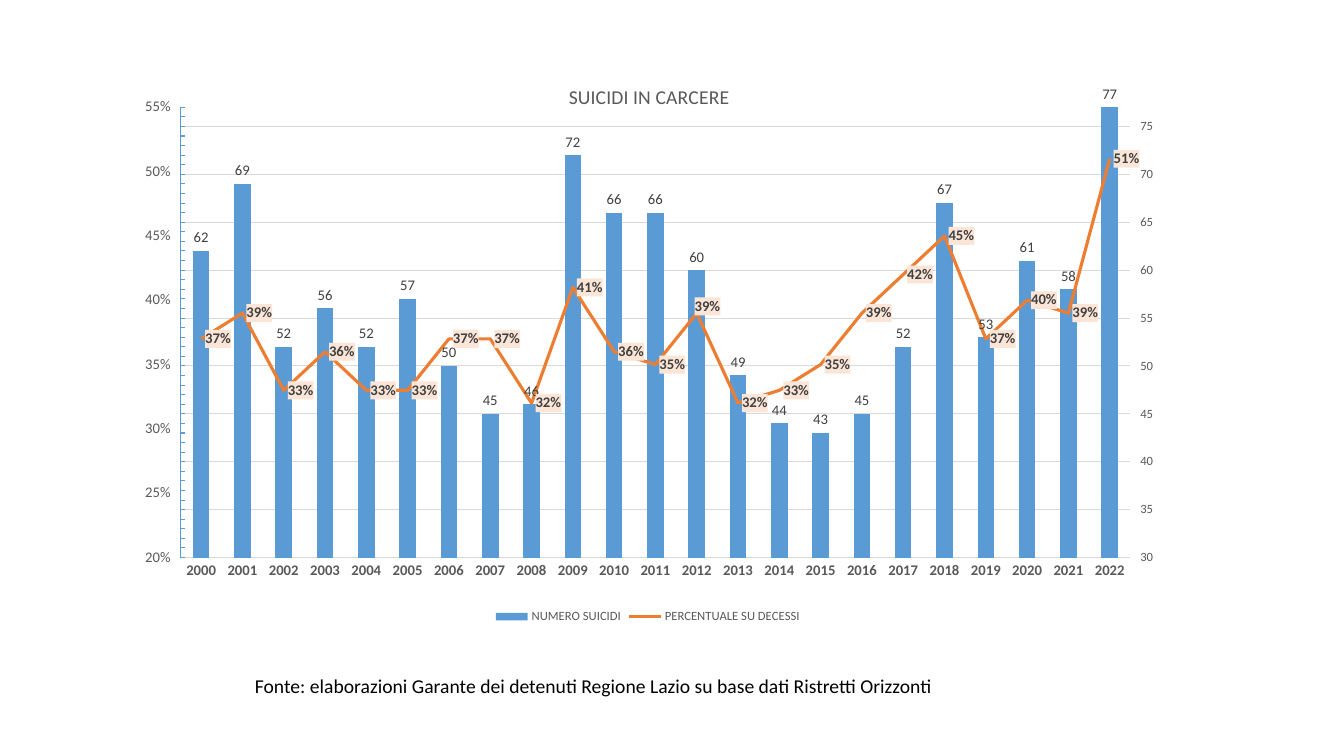
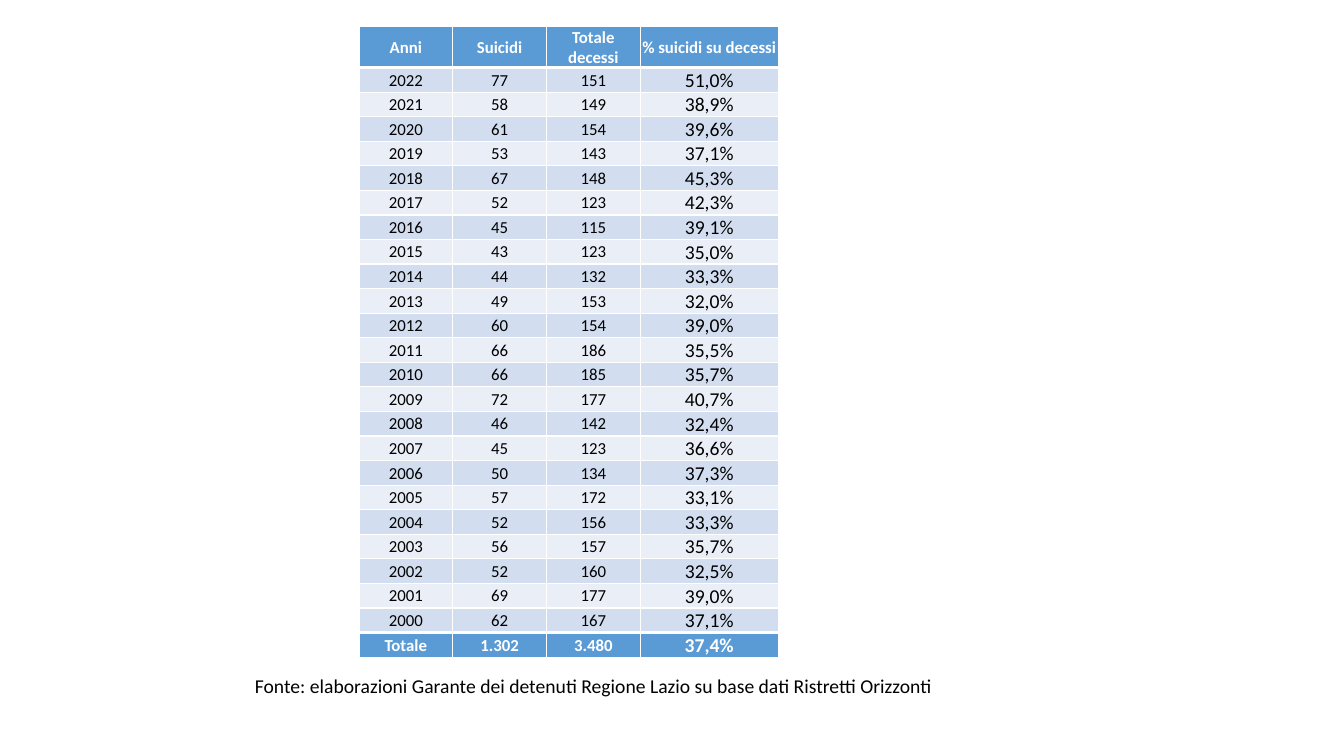
from copy import deepcopy

from lxml import etree
from pptx import Presentation
from pptx.chart.data import CategoryChartData
from pptx.dml.color import RGBColor
from pptx.enum import chart as ch, text as tx
from pptx.oxml import parse_xml
from pptx.oxml.ns import nsdecls, qn
from pptx.util import Inches, Pt

FONT = "Calibri"
BLUE = RGBColor(0x5B, 0x9B, 0xD5)
ORANGE = RGBColor(0xED, 0x7D, 0x31)
PEACH = RGBColor(0xFB, 0xE5, 0xD6)
BAND_DARK = RGBColor(0xD2, 0xDE, 0xEF)
BAND_LIGHT = RGBColor(0xEA, 0xEF, 0xF7)
GRID = RGBColor(0xD9, 0xD9, 0xD9)
GREY = RGBColor(0x59, 0x59, 0x59)
DARK = RGBColor(0x40, 0x40, 0x40)
BLACK = RGBColor(0, 0, 0)
WHITE = RGBColor(0xFF, 0xFF, 0xFF)

SOURCE = ("Fonte: elaborazioni Garante dei detenuti Regione Lazio "
          "su base dati Ristretti Orizzonti")
FIRST_YEAR = 2000
SUICIDES = [62, 69, 52, 56, 52, 57, 50, 45, 46, 72, 66, 66,
            60, 49, 44, 43, 45, 52, 67, 53, 61, 58, 77]
DEATHS = [167, 177, 160, 157, 156, 172, 134, 123, 142, 177, 185, 186,
          154, 153, 132, 123, 115, 123, 148, 143, 154, 149, 151]
SHARES = [s / d for s, d in zip(SUICIDES, DEATHS)]
YEARS = [str(FIRST_YEAR + i) for i in range(len(SUICIDES))]
HEADER = ["Anni", "Suicidi", "Totale decessi", "% suicidi su decessi"]
TOTALS = ["Totale", "1.302", "3.480", "37,4%"]
COL_WIDTHS = [0.93, 0.93, 0.93, 1.37]

SECONDARY_CAT, SECONDARY_VAL = "50010", "50020"


def set_font(font, size, color, bold=False):
    font.name, font.size, font.bold = FONT, Pt(size), bold
    font.color.rgb = color


def add_source(s):
    tf = s.shapes.add_textbox(Inches(2.43), Inches(6.64), Inches(7), Inches(0.34)).text_frame
    tf.word_wrap = False
    tf.auto_size = tx.MSO_AUTO_SIZE.SHAPE_TO_FIT_TEXT
    tf.text = SOURCE
    set_font(tf.paragraphs[0].runs[0].font, 14, BLACK)


def manual_layout(x, y, w=None, h=None):
    """Chart layout in fractions; with a size it places the inner plot area."""
    sized = w is not None
    items = [("layoutTarget", "inner")] if sized else []
    items += [("xMode", "edge"), ("yMode", "edge")] if sized else []
    items += [("x", x), ("y", y)] + ([("w", w), ("h", h)] if sized else [])
    body = "".join(f'<c:{tag} val="{val}"/>' for tag, val in items)
    return parse_xml(f'<c:layout {nsdecls("c")}><c:manualLayout>{body}'
                     '</c:manualLayout></c:layout>')


def replace_layout(parent, layout, after=None):
    for old in parent.findall(qn("c:layout")):
        parent.remove(old)
    if after is None:
        parent.insert(0, layout)
    else:
        after.addnext(layout)


def move_to_secondary_line(chart):
    """Turn the second column series into a line with axes of its own."""
    plot_area = chart._chartSpace.chart.plotArea
    bar = plot_area.find(qn("c:barChart"))
    ser = bar.findall(qn("c:ser"))[1]
    for invert in ser.findall(qn("c:invertIfNegative")):
        ser.remove(invert)
    line = parse_xml(
        f'<c:lineChart {nsdecls("c")}><c:grouping val="standard"/><c:varyColors val="0"/>'
        f'<c:marker val="1"/><c:axId val="{SECONDARY_CAT}"/><c:axId val="{SECONDARY_VAL}"/>'
        '</c:lineChart>')
    line.insert(2, ser)
    bar.addnext(line)
    cat_axis = parse_xml(
        f'<c:catAx {nsdecls("c")}><c:axId val="{SECONDARY_CAT}"/>'
        '<c:scaling><c:orientation val="minMax"/></c:scaling><c:delete val="1"/>'
        f'<c:axPos val="b"/><c:crossAx val="{SECONDARY_VAL}"/></c:catAx>')
    val_axis = parse_xml(
        f'<c:valAx {nsdecls("c", "a")}><c:axId val="{SECONDARY_VAL}"/>'
        '<c:scaling><c:orientation val="minMax"/><c:max val="0.55"/><c:min val="0.2"/></c:scaling>'
        '<c:delete val="0"/><c:axPos val="r"/><c:numFmt formatCode="0%" sourceLinked="0"/>'
        '<c:majorTickMark val="out"/><c:minorTickMark val="none"/><c:tickLblPos val="low"/>'
        '<c:spPr><a:ln><a:noFill/></a:ln></c:spPr>'
        f'<c:txPr><a:bodyPr/><a:p><a:pPr><a:defRPr sz="1050"><a:solidFill><a:srgbClr val="{GREY}"/>'
        f'</a:solidFill><a:latin typeface="{FONT}"/></a:defRPr></a:pPr><a:endParaRPr lang="it-IT"/>'
        f'</a:p></c:txPr><c:crossAx val="{SECONDARY_CAT}"/><c:crosses val="max"/>'
        '<c:crossBetween val="between"/><c:majorUnit val="0.05"/></c:valAx>')
    plot_area.find(qn("c:valAx")).addnext(val_axis)
    val_axis.addnext(cat_axis)


def style_axes(chart):
    cat, val = chart.category_axis, chart.value_axis
    cat.major_tick_mark = ch.XL_TICK_MARK.NONE
    cat.format.line.color.rgb, cat.format.line.width = GRID, Pt(0.75)
    set_font(cat.tick_labels.font, 10.5, GREY, True)
    val.minimum_scale, val.maximum_scale, val.major_unit = 30, 77, 5
    val.major_tick_mark = ch.XL_TICK_MARK.NONE
    val.minor_tick_mark = ch.XL_TICK_MARK.INSIDE
    val.minor_unit = 1
    val.tick_label_position = ch.XL_TICK_LABEL_POSITION.HIGH
    val.format.line.color.rgb, val.format.line.width = BLUE, Pt(0.75)
    grid = val.major_gridlines.format.line
    grid.color.rgb, grid.width = GRID, Pt(0.75)
    set_font(val.tick_labels.font, 9, GREY)


def style_columns(plot):
    plot.gap_width, plot.vary_by_categories = 150, False
    ser = plot.series[0]
    ser.format.fill.solid()
    ser.format.fill.fore_color.rgb = BLUE
    labels = ser.data_labels
    labels.show_value = True
    labels.position = ch.XL_LABEL_POSITION.OUTSIDE_END
    set_font(labels.font, 10.5, DARK)


def style_line(ser):
    ser.smooth = False
    ser.marker.style = ch.XL_MARKER_STYLE.NONE
    ser.format.line.color.rgb, ser.format.line.width = ORANGE, Pt(2.25)
    labels = ser.data_labels
    labels.show_value = True
    labels.number_format, labels.number_format_is_linked = "0%", False
    labels.position = ch.XL_LABEL_POSITION.RIGHT
    set_font(labels.font, 10.5, DARK, True)
    fill = parse_xml(f'<c:spPr {nsdecls("c", "a")}><a:solidFill><a:srgbClr val="{PEACH}"/>'
                     '</a:solidFill></c:spPr>')
    all_labels = labels._element
    all_labels.find(qn("c:txPr")).addprevious(fill)

    shifted = ser.points[YEARS.index("2012")].data_label
    shifted.position = ch.XL_LABEL_POSITION.RIGHT
    set_font(shifted.font, 10.5, DARK, True)
    label = all_labels.find(qn("c:dLbl"))
    for old in label.findall(qn("c:spPr")):
        label.remove(old)
    text_props = label.find(qn("c:txPr"))
    text_props.addprevious(deepcopy(all_labels.find(qn("c:numFmt"))))
    text_props.addprevious(deepcopy(fill))
    replace_layout(label, manual_layout(-0.006, -0.012), label.find(qn("c:idx")))


def add_suicide_chart(s):
    data = CategoryChartData()
    data.categories = YEARS
    data.add_series("NUMERO SUICIDI", SUICIDES, "General")
    data.add_series("PERCENTUALE SU DECESSI", [round(v, 2) for v in SHARES], "0%")
    chart = s.shapes.add_chart(ch.XL_CHART_TYPE.COLUMN_CLUSTERED, Inches(1.31), Inches(0.56),
                               Inches(10.23), Inches(5.67), data).chart
    set_font(chart.font, 10, BLACK)
    title = chart.chart_title
    title.text_frame.text = "SUICIDI IN CARCERE"
    set_font(title.text_frame.paragraphs[0].runs[0].font, 14, GREY)
    title_layout = manual_layout(0.42, 0.04)
    modes = title_layout[0]
    for i, tag in enumerate(("c:xMode", "c:yMode")):
        mode = etree.Element(qn(tag))
        mode.set("val", "edge")
        modes.insert(i, mode)
    replace_layout(title._element, title_layout, title._element.find(qn("c:tx")))
    chart.has_legend = True
    chart.legend.position = ch.XL_LEGEND_POSITION.BOTTOM
    chart.legend.include_in_layout = False
    set_font(chart.legend.font, 9, GREY)
    style_axes(chart)
    move_to_secondary_line(chart)
    columns, line = chart.plots
    style_columns(columns)
    style_line(line.series[0])
    replace_layout(chart._chartSpace.chart.plotArea, manual_layout(0.047, 0.089, 0.921, 0.788))


def set_borders(cell, top=1, bottom=1):
    tc_pr = cell._tc.get_or_add_tcPr()
    for side, width in zip("LRTB", (1, 1, top, bottom)):
        tc_pr.append(parse_xml(
            f'<a:ln{side} {nsdecls("a")} w="{Pt(width)}"><a:solidFill>'
            f'<a:srgbClr val="{WHITE}"/></a:solidFill></a:ln{side}>'))


def fill_cell(cell, text, fill, size, color, bold, anchor):
    cell.margin_left = cell.margin_right = cell.margin_top = Inches(0.01)
    cell.margin_bottom = 0
    cell.vertical_anchor = anchor
    cell.fill.solid()
    cell.fill.fore_color.rgb = fill
    p = cell.text_frame.paragraphs[0]
    p.text, p.alignment = text, tx.PP_ALIGN.CENTER
    set_font(p.runs[0].font, size, color, bold)


def add_year_table(s):
    years = [[y, str(n), str(d), f"{share:.1%}".replace(".", ",")]
             for y, n, d, share in zip(YEARS, SUICIDES, DEATHS, SHARES)]
    rows = [HEADER] + years[::-1] + [TOTALS]
    last = len(rows) - 1
    table = s.shapes.add_table(len(rows), len(HEADER), Inches(3.56), Inches(0.26),
                               Inches(sum(COL_WIDTHS)), Inches(6.19)).table
    for col, width in zip(table.columns, COL_WIDTHS):
        col.width = Inches(width)
    for i, values in enumerate(rows):
        table.rows[i].height = Inches(0.2 if i else 0.35)
        strong = i in (0, last)
        fill = BLUE if strong else (BAND_DARK if i % 2 else BAND_LIGHT)
        for j, value in enumerate(values):
            share = i > 0 and j == len(HEADER) - 1
            cell = table.cell(i, j)
            set_borders(cell, top=3 if i in (1, last) else 1,
                        bottom=3 if i in (0, last - 1) else 1)
            fill_cell(cell, value, fill, 14 if share else 12, WHITE if strong else BLACK, strong,
                      tx.MSO_ANCHOR.BOTTOM if share else tx.MSO_ANCHOR.MIDDLE)


def main():
    prs = Presentation()
    prs.slide_width, prs.slide_height = Inches(13.33), Inches(7.5)
    for add_content in (add_suicide_chart, add_year_table):
        s = prs.slides.add_slide(prs.slide_layouts[6])
        add_content(s)
        add_source(s)
    prs.save("out.pptx")


if __name__ == "__main__":
    main()
